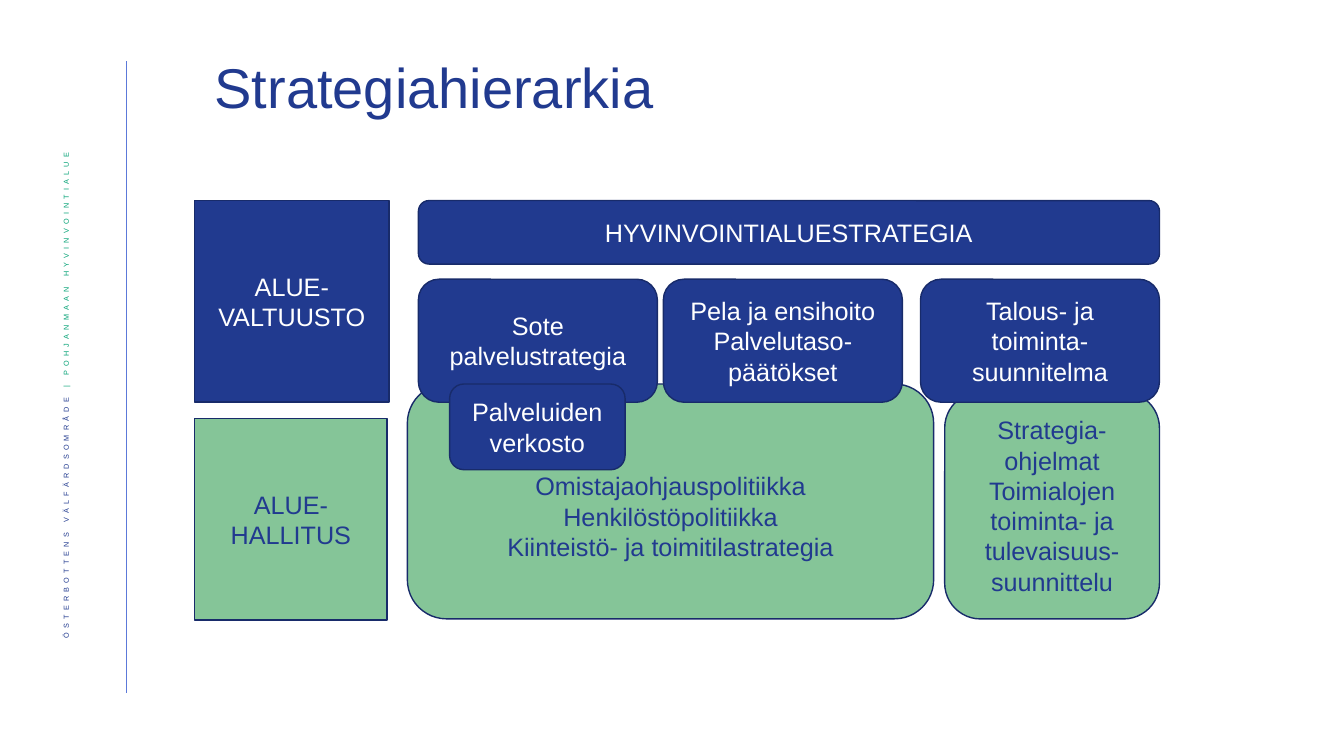
from pptx import Presentation
from pptx.dml.color import RGBColor
from pptx.enum.shapes import MSO_CONNECTOR, MSO_SHAPE
from pptx.enum.text import MSO_ANCHOR, PP_ALIGN
from pptx.oxml.ns import qn
from pptx.util import Inches, Pt
from lxml.etree import SubElement

NAVY = RGBColor(0x21, 0x3A, 0x8F)
OUTLINE = RGBColor(0x18, 0x2B, 0x6A)
LEAF = RGBColor(0x85, 0xC5, 0x98)
EMERALD = RGBColor(0x00, 0xA1, 0x74)
RULE = RGBColor(0x5C, 0x79, 0xD9)
WHITE = RGBColor(0xFF, 0xFF, 0xFF)

LEFT, TOP, RIGHT, BOTTOM = 4.15, 1.99, 11.5, 6.14
CARD_TOP, CARD_WIDTH, CARD_HEIGHT = 2.77, 2.37, 1.22


def add_text(para, text, size=18, color=WHITE, align=PP_ALIGN.CENTER, spacing=1.0):
    """Append a formatted span to a paragraph and return it."""
    para.alignment = align
    para.line_spacing = spacing
    span = para.add_run()
    span.text = text
    span.font.name = "Arial"
    span.font.size = Pt(size)
    span.font.color.rgb = color
    return span


def add_text_box(page, left, top, width, height):
    """Add a wrapping, vertically centred text box and return its frame."""
    frame = page.shapes.add_textbox(
        Inches(left), Inches(top), Inches(width), Inches(height)
    ).text_frame
    frame.word_wrap = True
    frame.vertical_anchor = MSO_ANCHOR.MIDDLE
    return frame


def add_block(page, left, top, width, height, lines, fill=NAVY,
              kind=MSO_SHAPE.ROUNDED_RECTANGLE, top_inset=0.05):
    """Add an outlined block with one centred paragraph per line."""
    block = page.shapes.add_shape(
        kind, Inches(left), Inches(top), Inches(width), Inches(height)
    )
    block.shadow.inherit = False
    block.fill.solid()
    block.fill.fore_color.rgb = fill
    block.line.color.rgb = OUTLINE
    block.line.width = Pt(1)
    frame = block.text_frame
    frame.word_wrap = True
    frame.vertical_anchor = MSO_ANCHOR.MIDDLE
    frame.margin_top = Inches(top_inset)
    for index, line in enumerate(lines):
        para = frame.add_paragraph() if index else frame.paragraphs[0]
        add_text(para, line, color=WHITE if fill == NAVY else NAVY)


def add_side_band(page, left, top, width, height):
    """Add the vertical rule and the rotated organisation name beside it."""
    rule = page.shapes.add_connector(
        MSO_CONNECTOR.STRAIGHT, Inches(1.25), Inches(0.61), Inches(1.25), Inches(6.88)
    )
    rule.line.color.rgb = RULE
    rule.line.width = Pt(0.5)
    SubElement(rule._element.spPr, qn("a:effectLst"))
    frame = add_text_box(page, left, top, width, height)
    frame._txBody.bodyPr.set("vert", "vert270")
    for text, color in (
        ("ÖSTERBOTTENS VÄLFÄRDSOMRÅDE ", NAVY),
        ("| POHJANMAAN HYVINVOINTIALUE", EMERALD),
    ):
        span = add_text(frame.paragraphs[0], text, size=9, color=color,
                        align=PP_ALIGN.RIGHT, spacing=0.9)
        properties = span.font._element
        properties.set("baseline", "30000")
        properties.set("spc", "300")


def add_title(page, left, top, width, height):
    """Add the slide title."""
    frame = add_text_box(page, left, top, width, height)
    add_text(frame.paragraphs[0], "Strategiahierarkia", size=40, color=NAVY,
             align=PP_ALIGN.LEFT, spacing=0.9)


def add_bodies(page, left, top, height):
    """Add the two deciding bodies, stacked in the left column."""
    add_block(page, left, top, 1.93, height, ["ALUE-VALTUUSTO"],
              kind=MSO_SHAPE.RECTANGLE)
    add_block(page, left, top + height + 0.16, 1.91, height, ["ALUE-HALLITUS"],
              fill=LEAF, kind=MSO_SHAPE.RECTANGLE)


def add_board_policies(page, bottom):
    """Add the green blocks that belong to the board."""
    add_block(page, RIGHT - 2.13, bottom - 2.25, 2.13, 2.25,
              ["Strategia-ohjelmat", "Toimialojen toiminta- ja tulevaisuus-suunnittelu"],
              fill=LEAF)
    add_block(page, LEFT - 0.11, bottom - 2.33, 5.22, 2.33,
              ["Omistajaohjauspolitiikka", "Henkilöstöpolitiikka",
               "Kiinteistö- ja toimitilastrategia"],
              fill=LEAF, top_inset=0.34)


def add_council_strategies(page, left, top, right):
    """Add the blue strategy blocks that belong to the council."""
    add_block(page, left, top, right - left, 0.63, ["HYVINVOINTIALUESTRATEGIA"])
    cards = (
        (right - CARD_WIDTH, ["Talous- ja toiminta-suunnitelma"]),
        (left + CARD_WIDTH + 0.06, ["Pela ja ensihoito", "Palvelutaso-päätökset"]),
        (left, ["Sote", "palvelustrategia"]),
    )
    for card_left, lines in cards:
        add_block(page, card_left, CARD_TOP, CARD_WIDTH, CARD_HEIGHT, lines)
    add_block(page, left + 0.31, 3.81, 1.74, 0.85, ["Palveluiden verkosto"])


def main():
    """Build the strategy hierarchy slide and save it."""
    deck = Presentation()
    deck.slide_width = Inches(13.33)
    deck.slide_height = Inches(7.5)
    page = deck.slides.add_slide(deck.slide_layouts[6])
    add_side_band(page, 0.42, 1.42, 0.52, 5.73)
    add_title(page, 2.03, 0.4, 9.98, 0.99)
    add_bodies(page, 1.93, TOP, 2)
    add_board_policies(page, BOTTOM)
    add_council_strategies(page, LEFT, TOP, RIGHT)
    deck.save("out.pptx")


if __name__ == "__main__":
    main()
